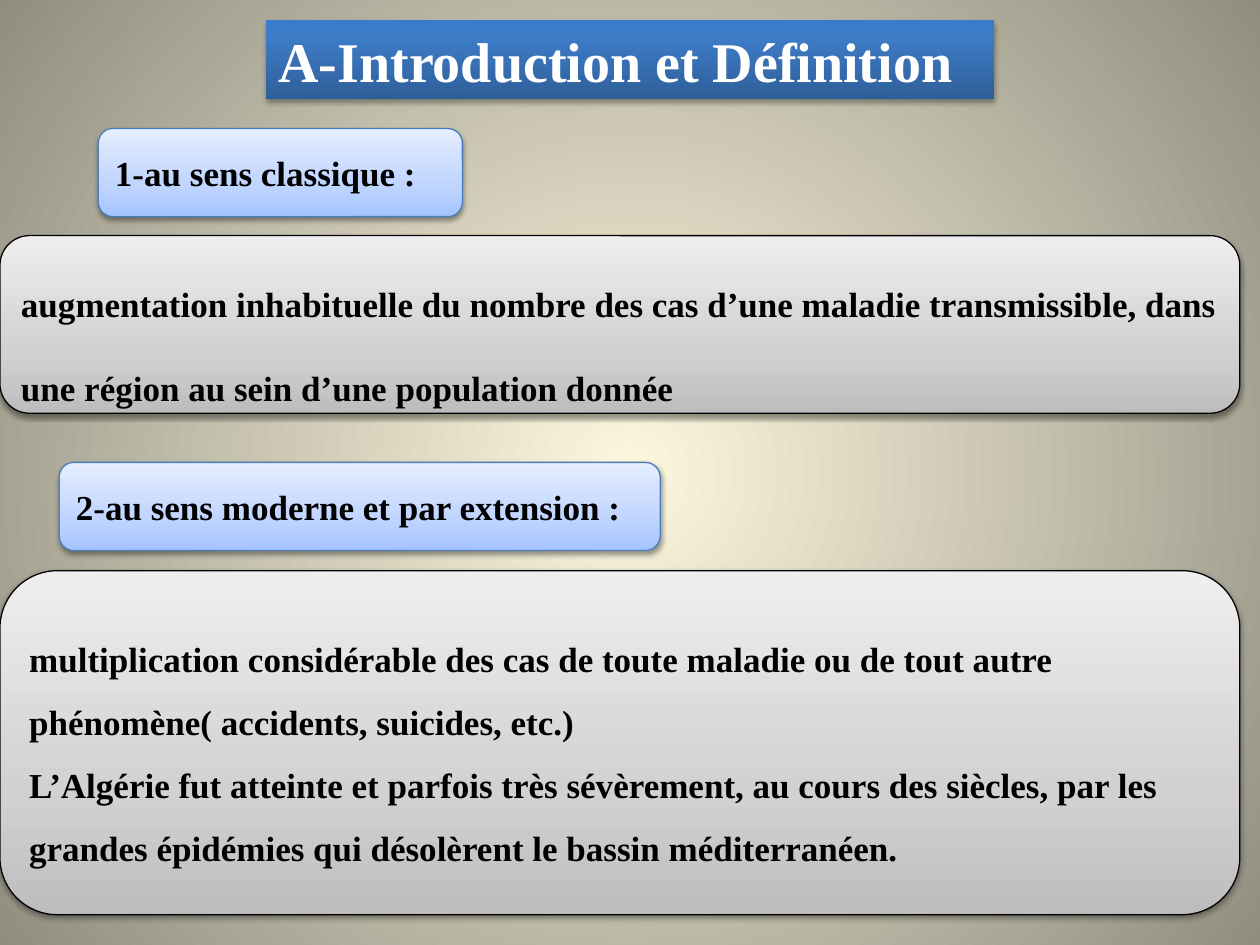
from lxml.etree import SubElement
from pptx import Presentation
from pptx.dml.color import RGBColor
from pptx.enum.shapes import MSO_SHAPE as Preset
from pptx.enum.text import MSO_ANCHOR as Anchor, MSO_AUTO_SIZE as AutoSize, PP_ALIGN as Align
from pptx.oxml import parse_xml
from pptx.oxml.ns import nsdecls, qn
from pptx.util import Inches, Pt

# Content: box position (left, top, width, height), style, line spacing, paragraphs
TITLE = ((2.11, 0.16, 5.78, 0.63), "title", 1, ["A-Introduction et Définition"])
BOXES = [
    ((0.78, 1.02, 2.89, 0.7), "heading", 1, ["1-au sens classique :"]),
    ((0, 1.87, 9.84, 1.41), "definition", 2, [
        "augmentation inhabituelle du nombre des cas d’une maladie transmissible, "
        "dans une région au sein d’une population donnée"]),
    ((0.47, 3.67, 4.77, 0.7), "heading", 1, ["2-au sens moderne et par extension :"]),
    ((0, 4.53, 9.84, 2.73), "definition", 1.5, [
        "multiplication considérable des cas de toute maladie ou de tout autre "
        "phénomène( accidents, suicides, etc.)",
        "L’Algérie fut atteinte et parfois très sévèrement, au cours des siècles, "
        "par les grandes épidémies qui désolèrent le bassin méditerranéen."]),
]

# Formats: gradient stops run from bottom to top; shadow is opacity %, distance
BACKGROUND = [(0, "FCF7DD"), (100, "918E81")]
STYLES = {
    "title": dict(stops=[(0, "2F5F99"), (80, "3D7CC7"), (100, "3A7CCB")],
                  line=None, shadow=(35, 1.8), size=32, color="FFFFFF"),
    "heading": dict(stops=[(0, "A4C4FF"), (35, "BFD4FF"), (100, "E6EEFF")],
                    line="4B7EBC", shadow=(38, 1.6), size=20, color="000000"),
    "definition": dict(stops=[(0, "BDBDBD"), (35, "D1D1D1"), (100, "EEEEEE")],
                       line="000000", shadow=(38, 1.6), size=20, color="000000"),
}
UPWARD = '<a:lin ang="16200000" scaled="0"/>'
FROM_CENTRE = ('<a:path path="circle"><a:fillToRect l="50000" t="50000" '
               'r="50000" b="50000"/></a:path>')


def rgb(value):
    return RGBColor.from_string(value)


def set_gradient(fill, properties, stops, direction):
    """Swap a solid fill for a gradient with any number of stops."""
    fill.solid()
    marks = "".join(f'<a:gs pos="{position * 1000}"><a:srgbClr val="{color}"/></a:gs>'
                    for position, color in stops)
    gradient = parse_xml(f'<a:gradFill {nsdecls("a")} rotWithShape="1">'
                         f'<a:gsLst>{marks}</a:gsLst>{direction}</a:gradFill>')
    properties.replace(properties.find(qn("a:solidFill")), gradient)


def set_shadow(shape, opacity, distance):
    shape.shadow.inherit = False
    effects = shape.element.spPr.find(qn("a:effectLst"))
    outer = SubElement(effects, qn("a:outerShdw"), blurRad=str(Pt(3.1)),
                       dist=str(Pt(distance)), dir="5400000", rotWithShape="0")
    color = SubElement(outer, qn("a:srgbClr"), val="000000")
    SubElement(color, qn("a:alpha"), val=str(opacity * 1000))


def format_box(shape, style, spacing, texts):
    set_gradient(shape.fill, shape.element.spPr, style["stops"], UPWARD)
    if style["line"]:
        shape.line.color.rgb = rgb(style["line"])
        shape.line.width = Pt(0.75)
    else:
        shape.line.fill.background()
    set_shadow(shape, *style["shadow"])

    frame = shape.text_frame
    frame.text = "\n".join(texts)
    frame_format = dict(word_wrap=True, auto_size=AutoSize.NONE, vertical_anchor=Anchor.MIDDLE)
    for name, value in frame_format.items():
        setattr(frame, name, value)
    font_format = dict(name="Times New Roman", size=Pt(style["size"]), bold=True)
    for paragraph in frame.paragraphs:
        paragraph.alignment = Align.LEFT
        paragraph.line_spacing = float(spacing)
        for run in paragraph.runs:
            for name, value in font_format.items():
                setattr(run.font, name, value)
            run.font.color.rgb = rgb(style["color"])


def main():
    presentation = Presentation()
    presentation.slide_width, presentation.slide_height = Inches(10), Inches(7.5)
    slide = presentation.slides.add_slide(presentation.slide_layouts[5])

    # Background
    background_fill = slide.background.fill
    background_fill.solid()
    set_gradient(background_fill, slide.element.find(".//" + qn("p:bgPr")),
                 BACKGROUND, FROM_CENTRE)

    # Title banner
    position, style, spacing, texts = TITLE
    title = slide.shapes.title
    for name, value in zip(("left", "top", "width", "height"), position):
        setattr(title, name, Inches(value))
    title.element.spPr.append(parse_xml(
        f'<a:prstGeom {nsdecls("a")} prst="round2SameRect"><a:avLst/></a:prstGeom>'))
    format_box(title, STYLES[style], spacing, texts)

    # Headings and definitions
    for position, style, spacing, texts in BOXES:
        box = slide.shapes.add_shape(Preset.ROUNDED_RECTANGLE, *map(Inches, position))
        format_box(box, STYLES[style], spacing, texts)

    presentation.save("out.pptx")


if __name__ == "__main__":
    main()
